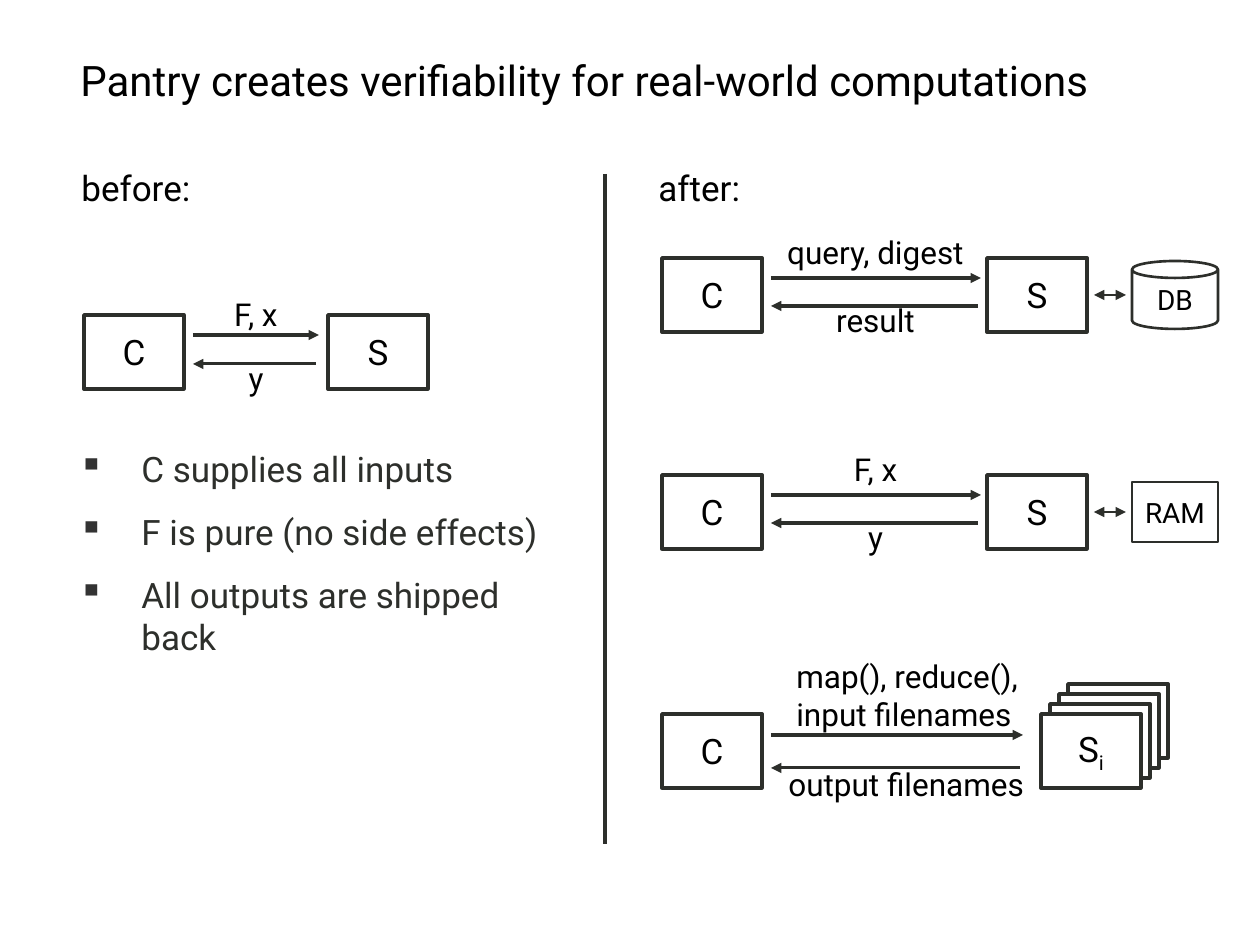
from lxml import etree
from pptx import Presentation
from pptx.dml.color import RGBColor
from pptx.enum.shapes import MSO_CONNECTOR, MSO_SHAPE
from pptx.enum.text import MSO_ANCHOR, PP_ALIGN
from pptx.oxml.ns import qn
from pptx.util import Pt

PX = 914400 / 126
RECT, CAN = MSO_SHAPE.RECTANGLE, MSO_SHAPE.CAN
STRAIGHT = MSO_CONNECTOR.STRAIGHT
LEFT, CENTER = PP_ALIGN.LEFT, PP_ALIGN.CENTER
MIDDLE = MSO_ANCHOR.MIDDLE
FONT = "Roboto"
COLORS = {"text": "000000", "ink": "2D2F2B", "bullet": "333333", "paper": "FFFFFF"}
NODE = (100, 74)


def emu(*lengths):
    return [round(n * PX) for n in lengths]


def rgb(name):
    return RGBColor.from_string(COLORS[name])


def style(frame, size, color="text", align=LEFT):
    frame.word_wrap = True
    for para in frame.paragraphs:
        para.alignment = align
        for run in para.runs:
            run.font.name = FONT
            run.font.size = Pt(size)
            run.font.color.rgb = rgb(color)


def add_text(slide, text, area, size, color="text", align=LEFT):
    frame = slide.shapes.add_textbox(*emu(*area)).text_frame
    frame.text = text
    style(frame, size, color, align)
    return frame


def add_box(slide, text, area, kind=RECT, size=20, width=2, filled=False):
    box = slide.shapes.add_shape(kind, *emu(*area))
    box.shadow.inherit = False
    if filled:
        box.fill.solid()
        box.fill.fore_color.rgb = rgb("paper")
    else:
        box.fill.background()
    box.line.color.rgb = rgb("ink")
    box.line.width = Pt(width)
    frame = box.text_frame
    frame.margin_left = frame.margin_right = 0
    frame.margin_top = frame.margin_bottom = 0
    frame.vertical_anchor = MIDDLE
    frame.text = text
    style(frame, size, align=CENTER)
    return frame


def add_line(slide, start, end, width, heads=()):
    """Draw a line; heads lists the ends (headEnd, tailEnd) that get a triangle."""
    line = slide.shapes.add_connector(STRAIGHT, *emu(*start, *end))
    line.line.color.rgb = rgb("ink")
    line.line.width = Pt(width)
    stroke = line.line._get_or_add_ln()
    for head in heads:
        etree.SubElement(stroke, qn(f"a:{head}"), type="triangle")
    etree.SubElement(line._element.spPr, qn("a:effectLst"))


def add_trade(slide, left, top, width, gap):
    """Draw the request arrow and, below it, the reply arrow."""
    right = left + width
    add_line(slide, (left, top), (right, top), 1.75, ["tailEnd"])
    add_line(slide, (right - 3, top + gap), (left, top + gap), 1.75, ["tailEnd"])


def add_bullets(slide, items, area):
    frame = add_text(slide, "\n".join(items), area, 20, "ink")
    indent = emu(63)[0]
    for para in frame.paragraphs:
        para.space_before = Pt(12)
        props = para._p.get_or_add_pPr()
        props.set("marL", str(indent))
        props.set("indent", str(-indent))
        color = etree.SubElement(props, qn("a:buClr"))
        etree.SubElement(color, qn("a:srgbClr"), val=COLORS["bullet"])
        etree.SubElement(props, qn("a:buChar"), char="▪")


def add_before(slide):
    add_text(slide, "before:", (69, 160, 140, 55), 20)
    add_box(slide, "C", (84, 315, *NODE))
    add_box(slide, "S", (328, 315, *NODE))
    add_trade(slide, 193, 335, 126, 29)
    add_text(slide, "F, x", (193, 289, 126, 50), 18, align=CENTER)
    add_text(slide, "y", (193, 353, 126, 50), 18, align=CENTER)
    add_bullets(slide, ["C supplies all inputs", "F is pure (no side effects)",
                        "All outputs are shipped back"], (66, 441, 522, 249))


def add_store(slide, top, send, reply, name, kind, height):
    """Draw a row whose server S keeps its state in a store."""
    add_box(slide, "C", (662, top, *NODE))
    add_box(slide, "S", (987, top, *NODE))
    add_trade(slide, 771, top + 20, 210, 28)
    add_text(slide, send, (771, top - 31, 209, 50), 18, align=CENTER)
    add_text(slide, reply, (771, top + 37, 209, 50), 18, align=CENTER)
    mid = top + 37
    add_line(slide, (1126, mid), (1094, mid), 1.25, ["headEnd", "tailEnd"])
    add_box(slide, name, (1132, mid - height // 2, 86, height), kind, 16, 1.5)


def add_stack(slide):
    """Draw the row with many servers."""
    add_box(slide, "C", (662, 714, *NODE))
    add_trade(slide, 771, 735, 252, 33)
    add_text(slide, "map(), reduce(), input filenames", (784, 651, 267, 89), 18)
    add_text(slide, "output filenames", (776, 759, 267, 50), 18)
    for step in (3, 2, 1, 0):
        frame = add_box(slide, "" if step else "S",
                        (1041 + 9 * step, 714 - 10 * step, *NODE), filled=True)
    index = frame.paragraphs[0].add_run()
    index.text = "i"
    index._r.get_or_add_rPr().set("baseline", "-25000")
    style(frame, 20, align=CENTER)


def main():
    deck = Presentation()
    deck.slide_width, deck.slide_height = emu(1260, 945)
    slide = deck.slides.add_slide(deck.slide_layouts[6])
    add_text(slide, "Pantry creates verifiability for real-world computations",
             (68, 48, 1130, 63), 24)
    add_line(slide, (605, 174), (605, 844), 2.5)
    add_before(slide)
    add_text(slide, "after:", (646, 160, 396, 55), 20)
    add_store(slide, 258, "query, digest", "result", "DB", CAN, 68)
    add_store(slide, 475, "F, x", "y", "RAM", RECT, 60)
    add_stack(slide)
    deck.save("out.pptx")


if __name__ == "__main__":
    main()
